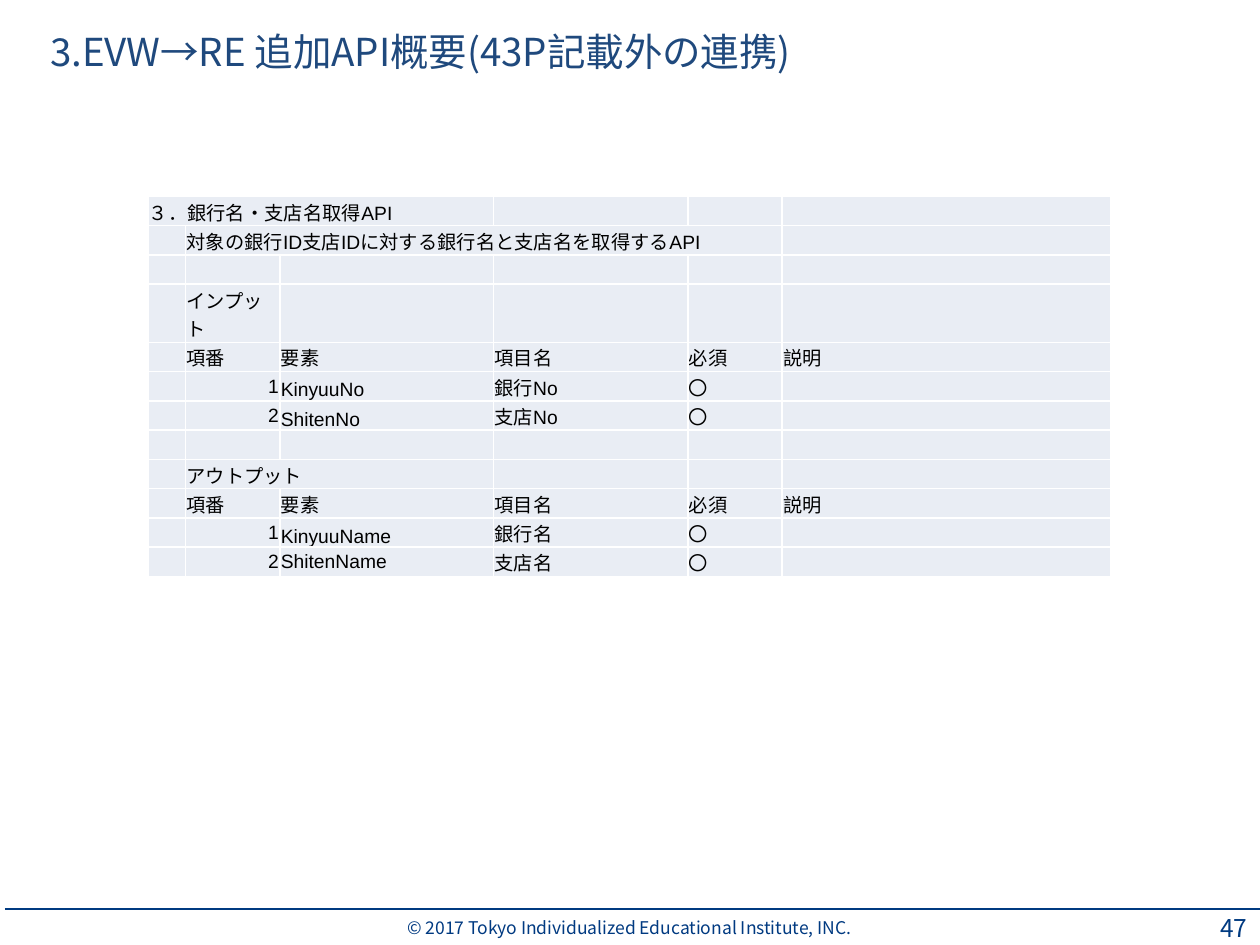
from lxml import etree
from pptx import Presentation
from pptx.dml.color import RGBColor
from pptx.enum.shapes import MSO_CONNECTOR as Conn
from pptx.enum.text import MSO_ANCHOR as Anchor, PP_ALIGN as Align
from pptx.oxml.ns import qn
from pptx.util import Cm, Pt

NAVY = RGBColor(0x00, 0x3A, 0x81)
BLUE = RGBColor(0x1F, 0x49, 0x7D)
PALE = RGBColor(0xE9, 0xED, 0xF4)
BLACK = RGBColor(0, 0, 0)
NOTO = "Noto Sans CJK JP"


def write(frame, text, face, size, color, align):
    para = frame.paragraphs[0]
    para.alignment = align
    run = para.add_run()
    run.text = text
    for key, val in {"name": face, "size": Pt(size)}.items():
        setattr(run.font, key, val)
    run.font.color.rgb = color
    east = etree.SubElement(run.font._element, qn("a:ea"))
    east.set("typeface", NOTO)


deck = Presentation()
deck.slide_width, deck.slide_height = Cm(25.4), Cm(19.05)
slide = deck.slides.add_slide(deck.slide_layouts[6])

rule = slide.shapes.add_connector(
    Conn.STRAIGHT, Cm(0.1), Cm(18.33), Cm(25.4), Cm(18.33))
rule.line.color.rgb = NAVY
rule.line.width = Pt(1)
etree.SubElement(rule._element.spPr, qn("a:effectLst"))

labels = [
    ("© 2017 Tokyo Individualized Educational Institute, INC.",
     (4.47, 18.34, 16.43, 0.71), 10, NAVY, Align.CENTER),
    ("47", (23.9, 18.34, 1.5, 0.71), 14, NAVY, Align.RIGHT),
    ("3.EVW→RE 追加API概要(43P記載外の連携)",
     (0.76, 0.28, 19.84, 1.52), 22, BLUE, Align.LEFT),
]
for text, place, size, color, align in labels:
    frame = slide.shapes.add_textbox(*map(Cm, place)).text_frame
    form = {"word_wrap": True, "vertical_anchor": Anchor.MIDDLE,
            "margin_top": 0, "margin_bottom": 0}
    for key, val in form.items():
        setattr(frame, key, val)
    write(frame, text, NOTO, size, color, align)

head = ["", "項番", "要素", "項目名", "必須", "説明"]
rows = [
    ["３．銀行名・支店名取得API"],
    ["", "対象の銀行ID支店IDに対する銀行名と支店名を取得するAPI"],
    [],
    ["", "インプット"],
    head,
    ["", "1", "KinyuuNo", "銀行No", "〇"],
    ["", "2", "ShitenNo", "支店No", "〇"],
    [],
    ["", "アウトプット"],
    head,
    ["", "1", "KinyuuName", "銀行名", "〇"],
    ["", "2", "ShitenName", "支店名", "〇"],
]
wide = [0.76, 1.9, 4.31, 3.92, 1.9, 6.63]
spans = [(0, 0, 2), (1, 1, 4), (8, 1, 2)]
low = [(row, col) for row in (5, 6, 10) for col in (2, 3)]
high = [0.59] * len(rows)
high[3] = 1.17

grid = slide.shapes.add_table(
    len(rows), len(wide), Cm(2.98), Cm(3.96),
    Cm(sum(wide)), Cm(sum(high))).table
grid.first_row = grid.horz_banding = False
for col, width in zip(grid.columns, wide):
    col.width = Cm(width)
for row, height in zip(grid.rows, high):
    row.height = Cm(height)
for row, first, last in spans:
    grid.cell(row, first).merge(grid.cell(row, last))

for r, texts in enumerate(rows):
    for c in range(len(wide)):
        cell = grid.cell(r, c)
        cell.fill.solid()
        cell.fill.fore_color.rgb = PALE
        form = {"margin_left": Cm(0.02), "margin_right": Cm(0.02),
                "margin_top": Cm(0.02), "margin_bottom": 0,
                "vertical_anchor":
                    Anchor.BOTTOM if (r, c) in low else Anchor.MIDDLE}
        for key, val in form.items():
            setattr(cell, key, val)
        text = texts[c] if c < len(texts) else ""
        if text:
            align = Align.RIGHT if text.isdigit() else Align.LEFT
            write(cell.text_frame, text, "Arial", 11, BLACK, align)
        else:
            para = cell.text_frame.paragraphs[0]._p
            etree.SubElement(para, qn("a:endParaRPr")).set("sz", "1100")

deck.save("out.pptx")
